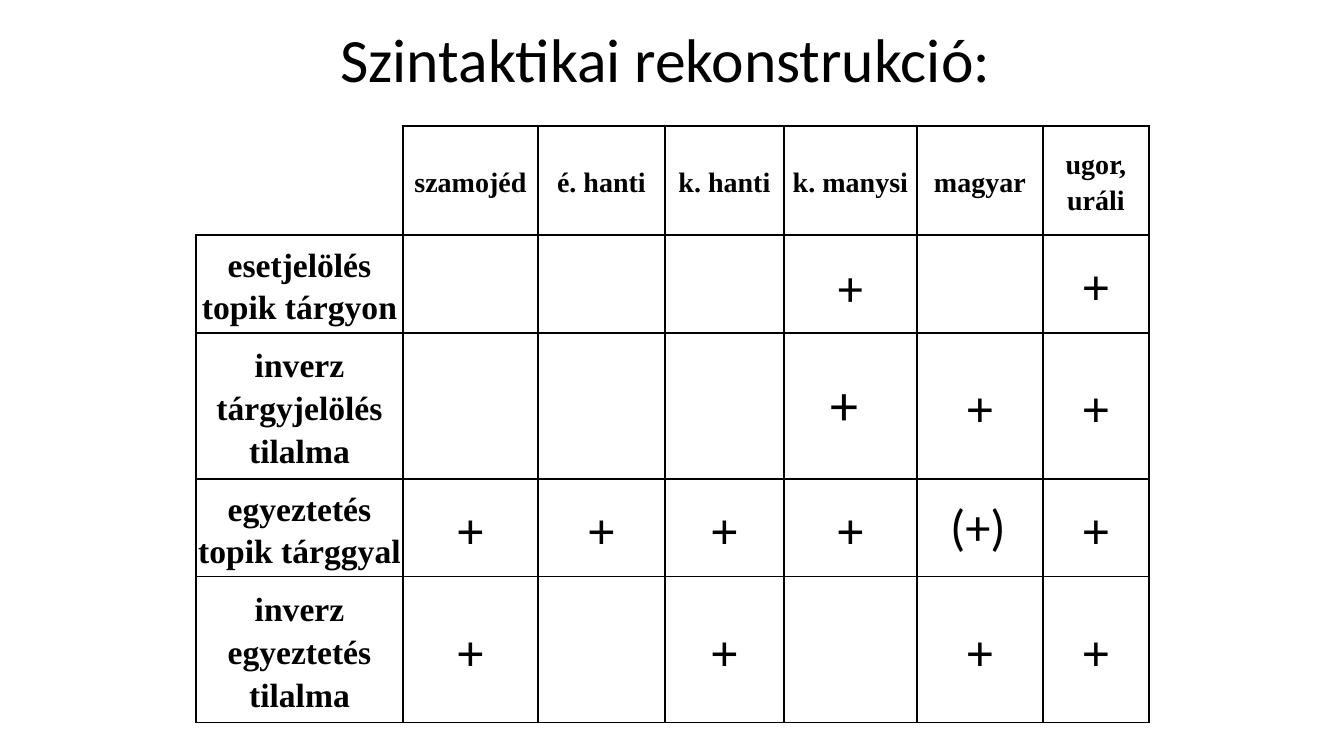
from pptx import Presentation, util as u
from pptx.dml.color import RGBColor
from pptx.enum import text
from pptx.oxml import parse_xml
from pptx.oxml.ns import nsdecls

SCALE = 914400 / 100.8
COLORS = {"ink": "000000"}
SANS, SERIF = "Calibri", "Times New Roman"

COLS = [207, 135, 127, 119, 133, 126, 106]
ROWS = [109, 98, 146, 98, 146]
HEADS = ["szamojéd", "é. hanti", "k. hanti", "k. manysi", "magyar", "ugor, uráli"]
BODY = [
    (["esetjelölés topik tárgyon"], ["", "", "", "+", "", "+"]),
    (["inverz tárgyjelölés tilalma"], ["", "", "", "+", "+", "+"]),
    (["egyeztetés topik tárggyal"], ["+", "+", "+", "+", "(+)", "+"]),
    (["inverz", "egyeztetés tilalma"], ["+", "", "+", "", "+", "+"]),
]
# Marks in the lighter sans face: (row, column) -> size, line spacing, right inset
LIGHT = {(1, 4): (36, 1.15, 1), (2, 4): (40, 1, 14), (3, 5): (36, 1, 5)}


def px(n):
    return u.Emu(round(n * SCALE))


def add_run(para, words, size, font, bold=False):
    run = para.add_run()
    run.text = words
    run.font.size = u.Pt(size)
    run.font.name = font
    run.font.bold = bold
    run.font.color.rgb = RGBColor.from_string(COLORS["ink"])


def add_title(slide, words):
    title = slide.shapes.title
    title.left, title.top, title.width, title.height = map(px, (151, 0, 1043, 126))
    frame = title.text_frame
    frame.word_wrap = True
    frame.vertical_anchor = text.MSO_ANCHOR.MIDDLE
    para = frame.paragraphs[0]
    para.alignment = text.PP_ALIGN.CENTER
    para.line_spacing = 0.9
    add_run(para, words, 44, SANS)


def set_edges(cell, shown):
    props = cell._tc.get_or_add_tcPr()
    for side in "LRTB":
        fill = "<a:noFill/>"
        if side in shown:
            fill = f'<a:solidFill><a:srgbClr val="{COLORS["ink"]}"/></a:solidFill>'
        props.append(parse_xml(
            f'<a:ln{side} {nsdecls("a")} w="{u.Pt(1)}">{fill}</a:ln{side}>'))


def fill_cell(cell, lines, size, font=SERIF, bold=True, space=1.15, right=1):
    cell.vertical_anchor = text.MSO_ANCHOR.MIDDLE
    cell.margin_left = cell.margin_top = px(1)
    cell.margin_right, cell.margin_bottom = px(right), 0
    frame = cell.text_frame
    for i, line in enumerate(lines):
        para = frame.add_paragraph() if i else frame.paragraphs[0]
        para.alignment = text.PP_ALIGN.CENTER
        para.line_spacing = space
        add_run(para, line, size, font, bold)


def add_grid(slide):
    frame = slide.shapes.add_table(len(ROWS), len(COLS), px(196), px(126),
                                   px(sum(COLS)), px(sum(ROWS)))
    grid = frame.table
    grid.first_row = grid.horz_banding = False
    for col, width in zip(grid.columns, COLS):
        col.width = px(width)
    for row, height in zip(grid.rows, ROWS):
        row.height = px(height)

    # Borders, with the top left corner left open
    for r in range(len(ROWS)):
        for c in range(len(COLS)):
            cell = grid.cell(r, c)
            set_edges(cell, "LRTB" if r or c else "RB")
            cell.fill.background()

    # Language names
    for c, head in enumerate(HEADS, 1):
        fill_cell(grid.cell(0, c), [head], 20)

    # Features and their marks
    for r, (label, marks) in enumerate(BODY, 1):
        fill_cell(grid.cell(r, 0), label, 24)
        for c, mark in enumerate(marks, 1):
            if (r, c) in LIGHT:
                size, space, right = LIGHT[r, c]
                fill_cell(grid.cell(r, c), [mark], size, SANS, False, space, right)
            elif mark:
                fill_cell(grid.cell(r, c), [mark], 36)


def main():
    deck = Presentation()
    deck.slide_width, deck.slide_height = px(1344), px(756)
    slide = deck.slides.add_slide(deck.slide_layouts[5])
    add_title(slide, "Szintaktikai rekonstrukció: ")
    add_grid(slide)
    deck.save("out.pptx")


if __name__ == "__main__":
    main()
